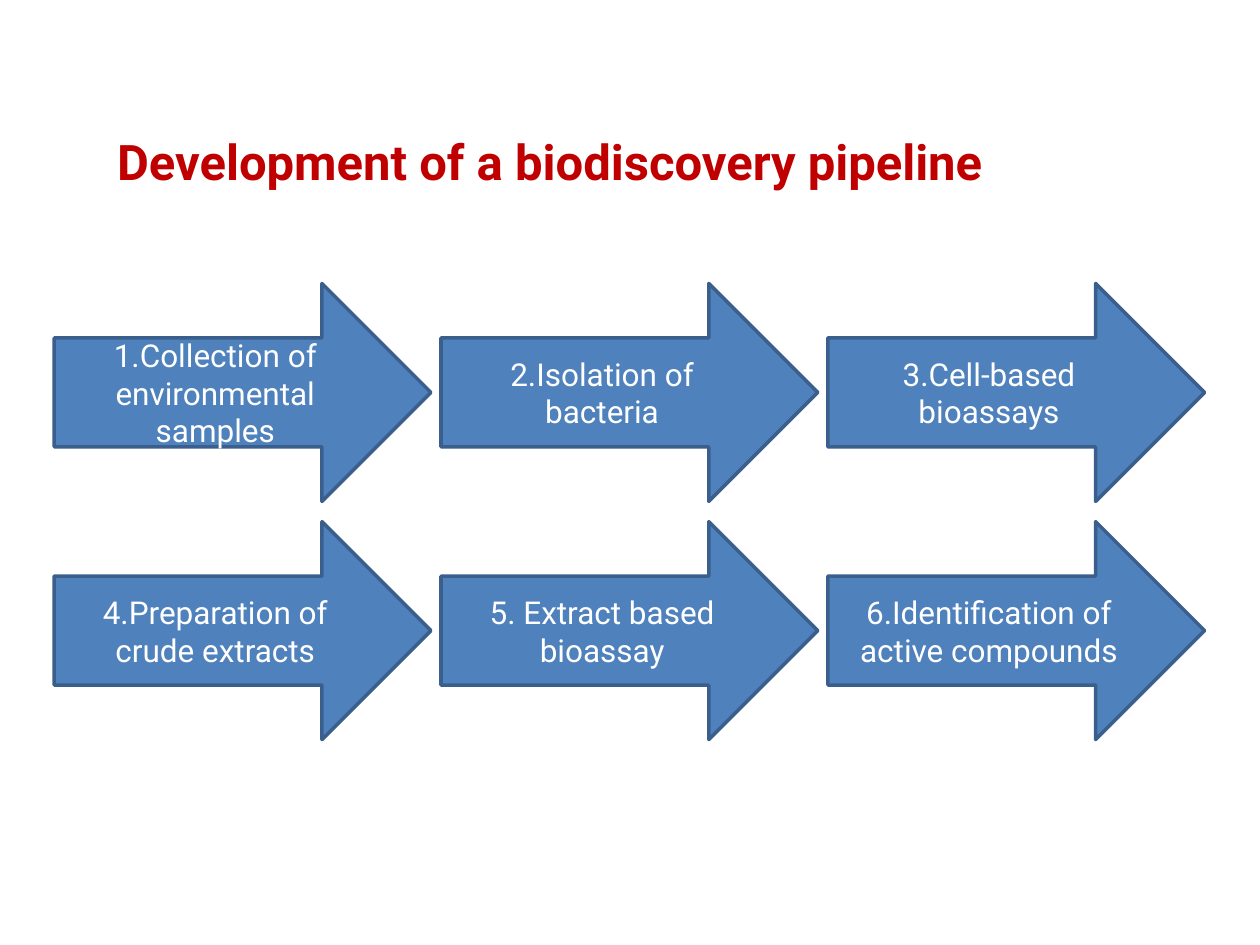
import pptx
import pptx.util
import pptx.dml.color
import pptx.enum.shapes
import pptx.enum.text

Inches = pptx.util.Inches
Align = pptx.enum.text.PP_ALIGN
Anchor = pptx.enum.text.MSO_ANCHOR

STEPS = [
    "1.Collection of environmental samples",
    "2.Isolation of bacteria",
    "3.Cell-based bioassays",
    "4.Preparation of crude extracts",
    "5. Extract based bioassay",
    "6.Identification of active compounds",
]
COLS = 3
LEFT, TOP = 0.43, 2.25
WIDE, HIGH = 2.99, 1.73
STEP_X, STEP_Y = 3.07, 1.89


def color(code):
    return pptx.dml.color.RGBColor.from_string(code)


def add_text(frame, text, size, code, align, anchor, bold=False):
    frame.word_wrap = True
    frame.auto_size = pptx.enum.text.MSO_AUTO_SIZE.NONE
    frame.vertical_anchor = anchor
    para = frame.paragraphs[0]
    para.alignment = align
    run = para.add_run()
    run.text = text
    run.font.name = "Roboto"
    run.font.size = pptx.util.Pt(size)
    run.font.bold = bold
    run.font.color.rgb = color(code)


def add_title(slide, text):
    title = slide.shapes.title
    title.left, title.top = Inches(0.83), Inches(0.99)
    title.width, title.height = Inches(8.43), Inches(0.57)
    add_text(title.text_frame, text, 28, "C00000", Align.LEFT, Anchor.TOP, True)


def add_arrow(slide, left, top, text):
    arrow = slide.shapes.add_shape(
        pptx.enum.shapes.MSO_SHAPE.RIGHT_ARROW,
        Inches(left), Inches(top), Inches(WIDE), Inches(HIGH))
    arrow.shadow.inherit = False
    arrow.fill.solid()
    arrow.fill.fore_color.rgb = color("4F81BD")
    arrow.line.color.rgb = color("3A5F8C")
    arrow.line.width = pptx.util.Pt(2)
    add_text(arrow.text_frame, text, 18, "FFFFFF", Align.CENTER, Anchor.MIDDLE)


def main():
    deck = pptx.Presentation()
    deck.slide_width, deck.slide_height = Inches(10), Inches(7.5)
    # Title Only layout
    slide = deck.slides.add_slide(deck.slide_layouts[5])
    add_title(slide, "Development of a biodiscovery pipeline")

    # Pipeline steps, row by row
    for i, text in enumerate(STEPS):
        row, col = divmod(i, COLS)
        add_arrow(slide, LEFT + col * STEP_X, TOP + row * STEP_Y, text)

    deck.save("out.pptx")


if __name__ == "__main__":
    main()
